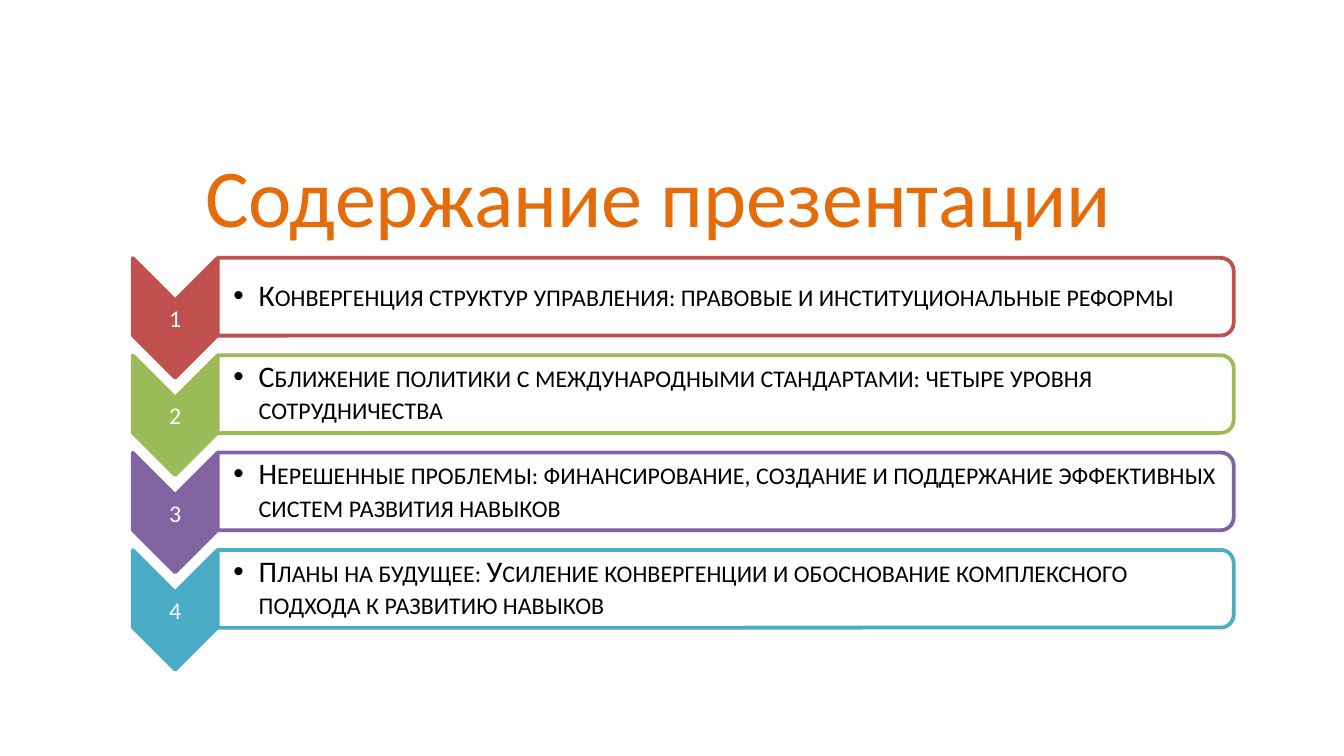
import pptx
import pptx.dml.color
import pptx.enum.shapes
import pptx.enum.text
import pptx.oxml.ns
import pptx.util
from lxml import etree

Cm = pptx.util.Cm
Kind = pptx.enum.shapes.MSO_SHAPE
Align = pptx.enum.text.PP_ALIGN
qn = pptx.oxml.ns.qn


def paint(code):
    return pptx.dml.color.RGBColor.from_string(code)


class Deck:
    face = "Calibri"
    size = 16

    def __init__(self, show):
        self.slide = show.slides.add_slide(show.slide_layouts[5])

    def style(self, para, size, color, align):
        para.alignment = align
        for run in para.runs:
            run.font.name = self.face
            run.font.size = pptx.util.Pt(size)
            run.font.color.rgb = paint(color)

    def title(self, text, x, y, w, h):
        box = self.slide.shapes.title
        box.left, box.top, box.width, box.height = Cm(x), Cm(y), Cm(w), Cm(h)
        box.text_frame.text = text
        box.text_frame.vertical_anchor = pptx.enum.text.MSO_ANCHOR.MIDDLE
        self.style(box.text_frame.paragraphs[0], 44, "E46C0A", Align.CENTER)

    def shape(self, kind, x, y, w, h, fill, line, alpha=100):
        item = self.slide.shapes.add_shape(kind, Cm(x), Cm(y), Cm(w), Cm(h))
        item.rotation = 90
        item.shadow.inherit = False
        item.fill.solid()
        item.fill.fore_color.rgb = paint(fill)
        item.line.color.rgb = paint(line)
        item.line.width = pptx.util.Pt(2)
        if alpha < 100:
            tone = item.fill._xPr.find(qn("a:solidFill"))[0]
            etree.SubElement(tone, qn("a:alpha"), val=str(alpha * 1000))

    def label(self, text, x, y, w, h, color, inset=0.03, align=Align.CENTER):
        box = self.slide.shapes.add_textbox(Cm(x), Cm(y), Cm(w), Cm(h))
        frame = box.text_frame
        frame.word_wrap = True
        frame.vertical_anchor = pptx.enum.text.MSO_ANCHOR.MIDDLE
        frame.margin_left = Cm(inset)
        frame.margin_right = frame.margin_top = frame.margin_bottom = Cm(0.03)
        frame.text = text
        para = frame.paragraphs[0]
        para.line_spacing = 0.9
        self.style(para, self.size, color, align)
        for run in para.runs:
            run.font._element.set("cap", "small")
        return para

    def bullet(self, text, x, y, w, h):
        para = self.label(text, x, y, w, h, "000000", 0.3, Align.LEFT)
        props = para._p.get_or_add_pPr()
        props.set("marL", str(Cm(0.48)))
        props.set("indent", str(-Cm(0.48)))
        etree.SubElement(props, qn("a:buFont"), typeface="Arial")
        etree.SubElement(props, qn("a:buChar"), char="•")

    def step(self, num, text, color, y):
        self.shape(Kind.CHEVRON, 2.18, y + 0.26, 2.26, 1.6, color, color)
        self.label(str(num), 2.51, y + 0.71, 1.6, 0.69, "FFFFFF")
        self.shape(Kind.ROUND_2_SAME_RECTANGLE, 12.98, y - 8.94, 1.47, 19.2,
                   "FFFFFF", color, 90)
        self.bullet(text, 4.11, y, 19.13, 1.32)


def main():
    show = pptx.Presentation()
    show.slide_width, show.slide_height = Cm(25.4), Cm(14.29)
    deck = Deck(show)
    deck.title("Содержание презентации", 1.02, 2.49, 22.86, 2.39)
    steps = [
        ("Конвергенция структур управления: правовые и институциональные реформы", "C0504D"),
        ("Сближение политики с международными стандартами: четыре уровня сотрудничества", "9BBB59"),
        ("Нерешенные проблемы: финансирование, создание и поддержание эффективных "
         "систем развития навыков", "8064A2"),
        ("Планы на будущее: Усиление конвергенции и обоснование комплексного "
         "подхода к развитию навыков", "4BACC6"),
    ]
    for i, (text, color) in enumerate(steps):
        deck.step(i + 1, text, color, 4.95 + 1.84 * i)
    show.save("out.pptx")


if __name__ == "__main__":
    main()
